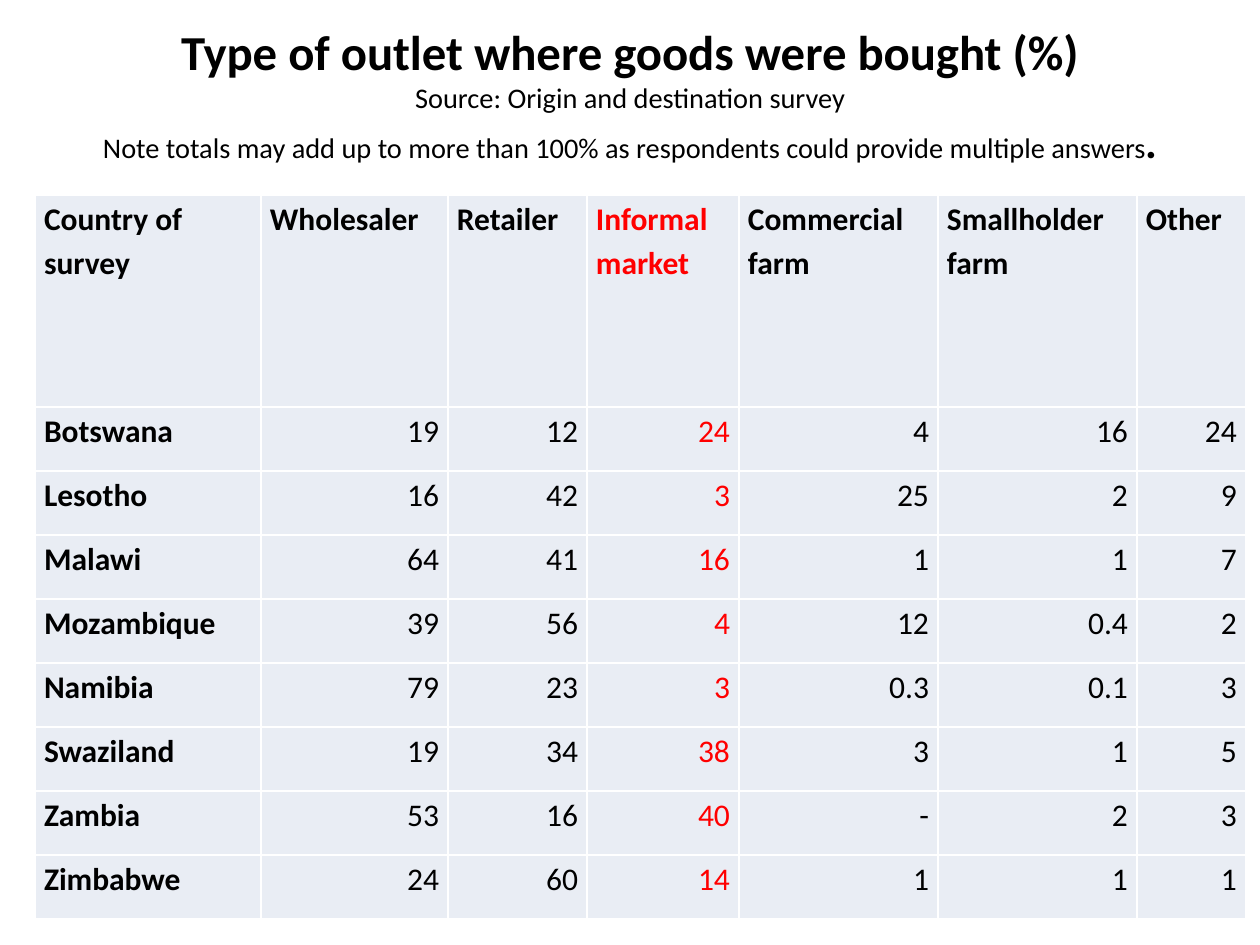
import pptx
import pptx.util
import pptx.dml.color
import pptx.enum.text
import pptx.oxml

PX = 914400 // 126
ALIGN = pptx.enum.text.PP_ALIGN
NS = "http://schemas.openxmlformats.org/drawingml/2006/main"


def style(font, size, color, bold):
    font.name = "Calibri"
    font.size = pptx.util.Pt(size)
    font.bold = bold
    font.color.rgb = pptx.dml.color.RGBColor.from_string(color)


def border(cell, color):
    """Draw a 1 pt line on all four sides; call before filling the cell."""
    for side in "LRTB":
        cell._tc.get_or_add_tcPr().append(pptx.oxml.parse_xml(
            f'<a:ln{side} xmlns:a="{NS}" w="12700"><a:solidFill>'
            f'<a:srgbClr val="{color}"/></a:solidFill></a:ln{side}>'))


deck = pptx.Presentation()
deck.slide_width = 1260 * PX
deck.slide_height = 945 * PX
slide = deck.slides.add_slide(deck.slide_layouts[5])

# Title with source and note
title = slide.shapes.title
title.left, title.top = 63 * PX, 38 * PX
title.width, title.height = 1134 * PX, 157 * PX
frame = title.text_frame
frame.auto_size = pptx.enum.text.MSO_AUTO_SIZE.NONE
frame.vertical_anchor = pptx.enum.text.MSO_ANCHOR.MIDDLE
frame.margin_bottom = 50 * PX
head = frame.paragraphs[0]
head.alignment = ALIGN.CENTER
lines = [
    [("Type of outlet where goods were bought (%)", 27.9, True)],
    [("Source: Origin and destination survey", 16.2, False)],
    [("Note totals may add up to more than 100% as respondents "
      "could provide multiple answers", 16.2, False), (".", 25.2, True)],
]
for i, line in enumerate(lines):
    if i:
        head.add_line_break()
    for text, size, bold in line:
        run = head.add_run()
        run.text = text
        style(run.font, size, "000000", bold)

# Outlet table
rows = [
    ["Country of survey", "Wholesaler", "Retailer", "Informal market",
     "Commercial farm", "Smallholder farm", "Other"],
    ["Botswana", "19", "12", "24", "4", "16", "24"],
    ["Lesotho", "16", "42", "3", "25", "2", "9"],
    ["Malawi", "64", "41", "16", "1", "1", "7"],
    ["Mozambique", "39", "56", "4", "12", "0.4", "2"],
    ["Namibia", "79", "23", "3", "0.3", "0.1", "3"],
    ["Swaziland", "19", "34", "38", "3", "1", "5"],
    ["Zambia", "53", "16", "40", "-", "2", "3"],
    ["Zimbabwe", "24", "60", "14", "1", "1", "1"],
]
widths = [226, 187, 139, 152, 199, 199, 109]
heights = [212] + [64] * 8
table = slide.shapes.add_table(
    len(rows), len(widths), 35 * PX, 195 * PX,
    sum(widths) * PX, sum(heights) * PX).table
table.first_row = table.horz_banding = False
for col, width in zip(table.columns, widths):
    col.width = width * PX
for row, height in zip(table.rows, heights):
    row.height = height * PX

for r, row in enumerate(rows):
    for c, text in enumerate(row):
        cell = table.cell(r, c)
        border(cell, "FFFFFF")
        cell.fill.solid()
        cell.fill.fore_color.rgb = pptx.dml.color.RGBColor.from_string("E9EDF4")
        cell.margin_left = cell.margin_right = 9 * PX
        cell.margin_top = cell.margin_bottom = 0
        cell.text = text
        label = r == 0 or c == 0
        para = cell.text_frame.paragraphs[0]
        para.alignment = ALIGN.LEFT if label else ALIGN.RIGHT
        para.line_spacing = 1.15
        style(para.font, 18, "FF0000" if c == 3 else "000000", label)

deck.save("out.pptx")
